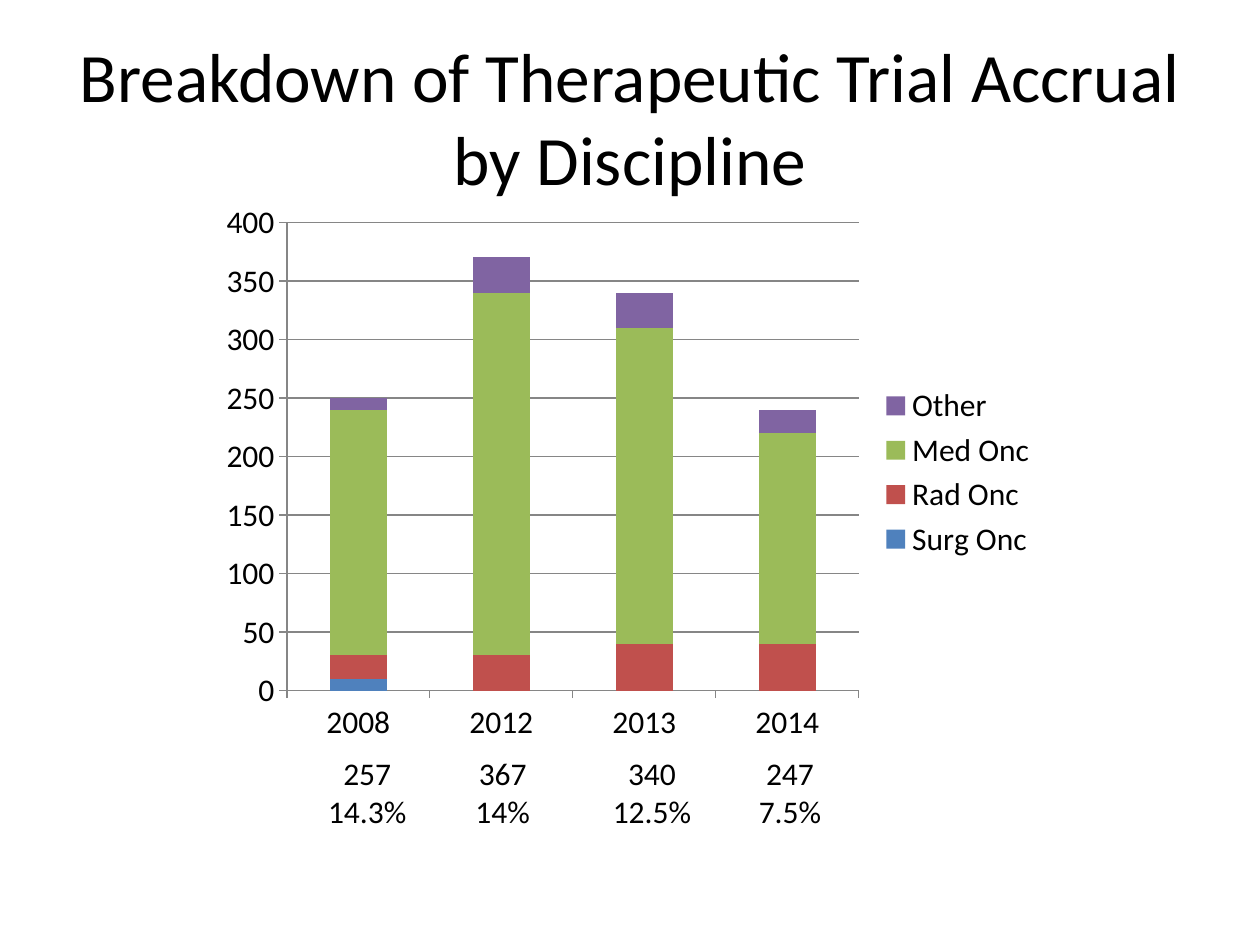
from dataclasses import dataclass

from lxml.etree import SubElement
from pptx import Presentation
from pptx.chart.data import CategoryChartData
from pptx.dml.color import RGBColor
from pptx.enum.chart import XL_CHART_TYPE, XL_LEGEND_POSITION, XL_TICK_MARK
from pptx.enum.text import MSO_ANCHOR as Anchor, PP_ALIGN as Align
from pptx.oxml.ns import qn
from pptx.util import Inches, Pt

WIDTH, HEIGHT = Inches(10), Inches(7.5)
COLUMNS, ROWS = 100, 75
FONT = "Calibri"
BLACK = RGBColor(0x00, 0x00, 0x00)
GRAY = RGBColor(0x86, 0x86, 0x86)
BLUE = RGBColor(0x4F, 0x81, 0xBD)
RED = RGBColor(0xC0, 0x50, 0x4D)
GREEN = RGBColor(0x9B, 0xBB, 0x59)
PURPLE = RGBColor(0x80, 0x64, 0xA2)


@dataclass
class Box:
    """A rectangle in columns and rows of the slide's grid."""
    left: float
    top: float
    width: float
    height: float

    def lengths(self) -> tuple[int, int, int, int]:
        column, row = WIDTH / COLUMNS, HEIGHT / ROWS
        return (int(self.left * column), int(self.top * row),
                int(self.width * column), int(self.height * row))


@dataclass
class Discipline:
    name: str
    accruals: tuple[int, ...]
    color: RGBColor


@dataclass
class YearTotal:
    year: str
    total: str
    share: str
    left: float
    width: float


DISCIPLINES = [
    Discipline("Surg Onc", (10, 0, 0, 0), BLUE),
    Discipline("Rad Onc", (20, 30, 40, 40), RED),
    Discipline("Med Onc", (210, 310, 270, 180), GREEN),
    Discipline("Other", (10, 30, 30, 20), PURPLE),
]
YEARS = [
    YearTotal("2008", "257", "14.3%", 25, 8.3),
    YearTotal("2012", "367", "14%", 36.7, 6.4),
    YearTotal("2013", "340", "12.5%", 47.6, 8.3),
    YearTotal("2014", "247", "7.5%", 59.2, 7),
]
# Percentages of the chart's size
PLOT_AREA = {"x": 9.15, "y": 5.3, "w": 68.1, "h": 83.7}


def style_font(font, size: float) -> None:
    font.name, font.size = FONT, Pt(size)
    font.color.rgb = BLACK


def add_text(slide, box: Box, text: str, size: float, wrap: bool) -> None:
    text_frame = slide.shapes.add_textbox(*box.lengths()).text_frame
    text_frame.text = text
    text_frame.word_wrap = wrap
    text_frame.vertical_anchor = Anchor.MIDDLE if wrap else Anchor.TOP
    for paragraph in text_frame.paragraphs:
        paragraph.alignment = Align.CENTER
        for run in paragraph.runs:
            style_font(run.font, size)


def fix_plot_area(chart) -> None:
    """Place the inner plot area by percentages of the chart's size."""
    plot_area = chart.element.find(".//" + qn("c:plotArea"))
    layout = plot_area.find(qn("c:layout"))
    if layout is None:
        layout = SubElement(plot_area, qn("c:layout"))
        plot_area.insert(0, layout)
    manual = SubElement(layout, qn("c:manualLayout"))
    settings = {"layoutTarget": "inner", "xMode": "edge", "yMode": "edge"}
    settings.update({tag: value / 100 for tag, value in PLOT_AREA.items()})
    for tag, value in settings.items():
        SubElement(manual, qn(f"c:{tag}")).set("val", str(value))


def add_accrual_chart(slide, box: Box) -> None:
    data = CategoryChartData()
    data.categories = [item.year for item in YEARS]
    for discipline in DISCIPLINES:
        data.add_series(discipline.name, discipline.accruals)
    chart = slide.shapes.add_chart(
        XL_CHART_TYPE.COLUMN_STACKED, *box.lengths(), data).chart
    style_font(chart.font, 18)
    chart.has_title = False
    chart.has_legend = True
    chart.legend.position = XL_LEGEND_POSITION.RIGHT
    chart.legend.include_in_layout = False

    # Columns
    plot = chart.plots[0]
    plot.gap_width, plot.overlap = 150, 100
    plot.vary_by_categories = False
    for series, discipline in zip(plot.series, DISCIPLINES):
        series.format.fill.solid()
        series.format.fill.fore_color.rgb = discipline.color

    # Axes and gridlines
    value_axis = chart.value_axis
    value_axis.minimum_scale, value_axis.maximum_scale = 0, 400
    value_axis.major_unit = 50
    value_axis.has_major_gridlines = True
    for axis in (chart.category_axis, value_axis):
        axis.major_tick_mark = XL_TICK_MARK.OUTSIDE
        axis.minor_tick_mark = XL_TICK_MARK.NONE
    for part in (chart.category_axis, value_axis, value_axis.major_gridlines):
        part.format.line.color.rgb = GRAY
        part.format.line.width = Pt(0.75)
    fix_plot_area(chart)


def main() -> None:
    presentation = Presentation()
    presentation.slide_width, presentation.slide_height = WIDTH, HEIGHT
    slide = presentation.slides.add_slide(presentation.slide_layouts[6])

    # Title
    add_text(slide, Box(5, 3, 90, 12.5),
             "Breakdown of Therapeutic Trial Accrual by Discipline", 39.6, True)

    # Totals and shares below the years
    for item in YEARS:
        add_text(slide, Box(item.left, 59.37, item.width, 7.1),
                 f"{item.total}\n{item.share}", 18, False)

    # Chart
    add_accrual_chart(slide, Box(16.67, 15.3, 66.67, 44.4))
    presentation.save("out.pptx")


if __name__ == "__main__":
    main()
